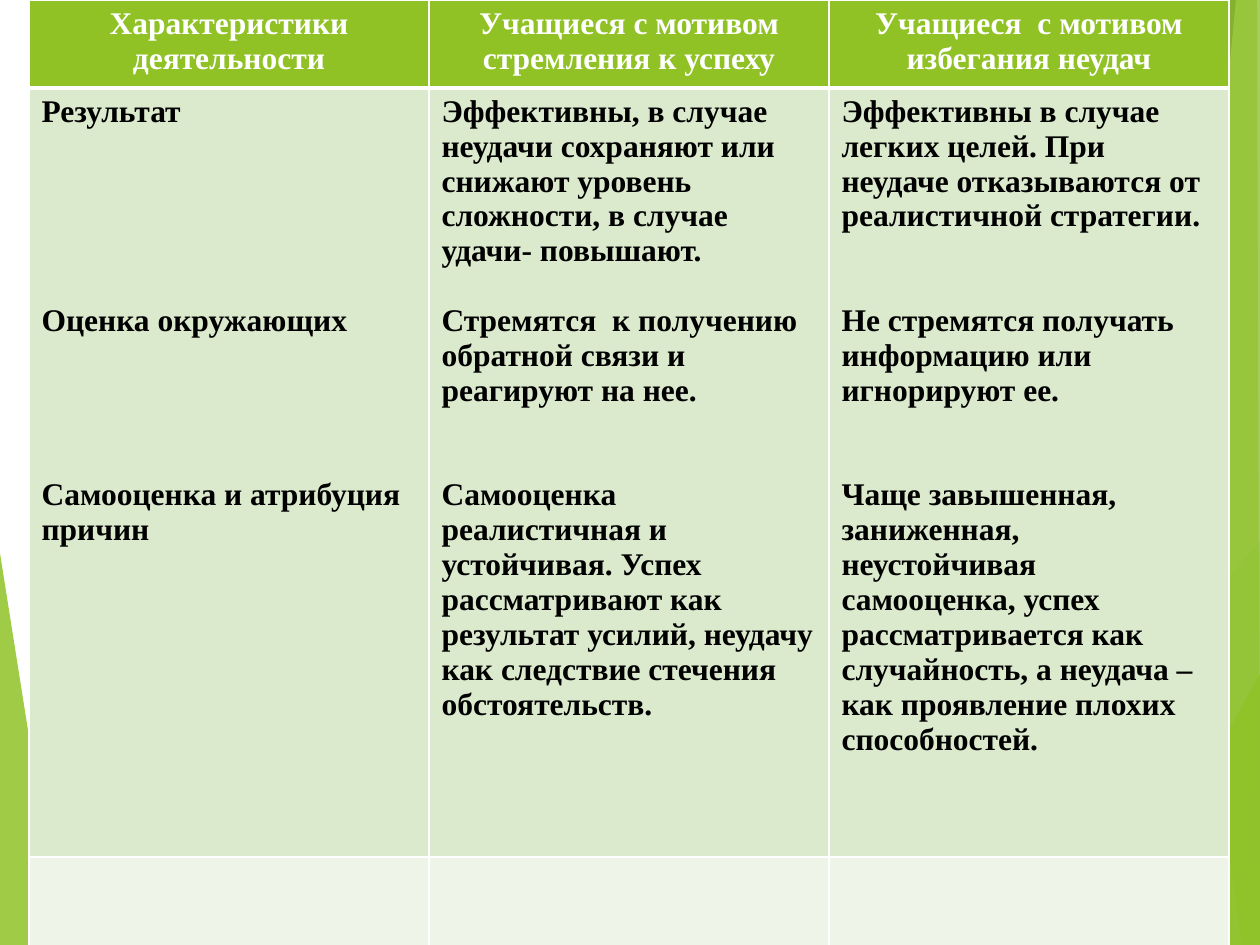
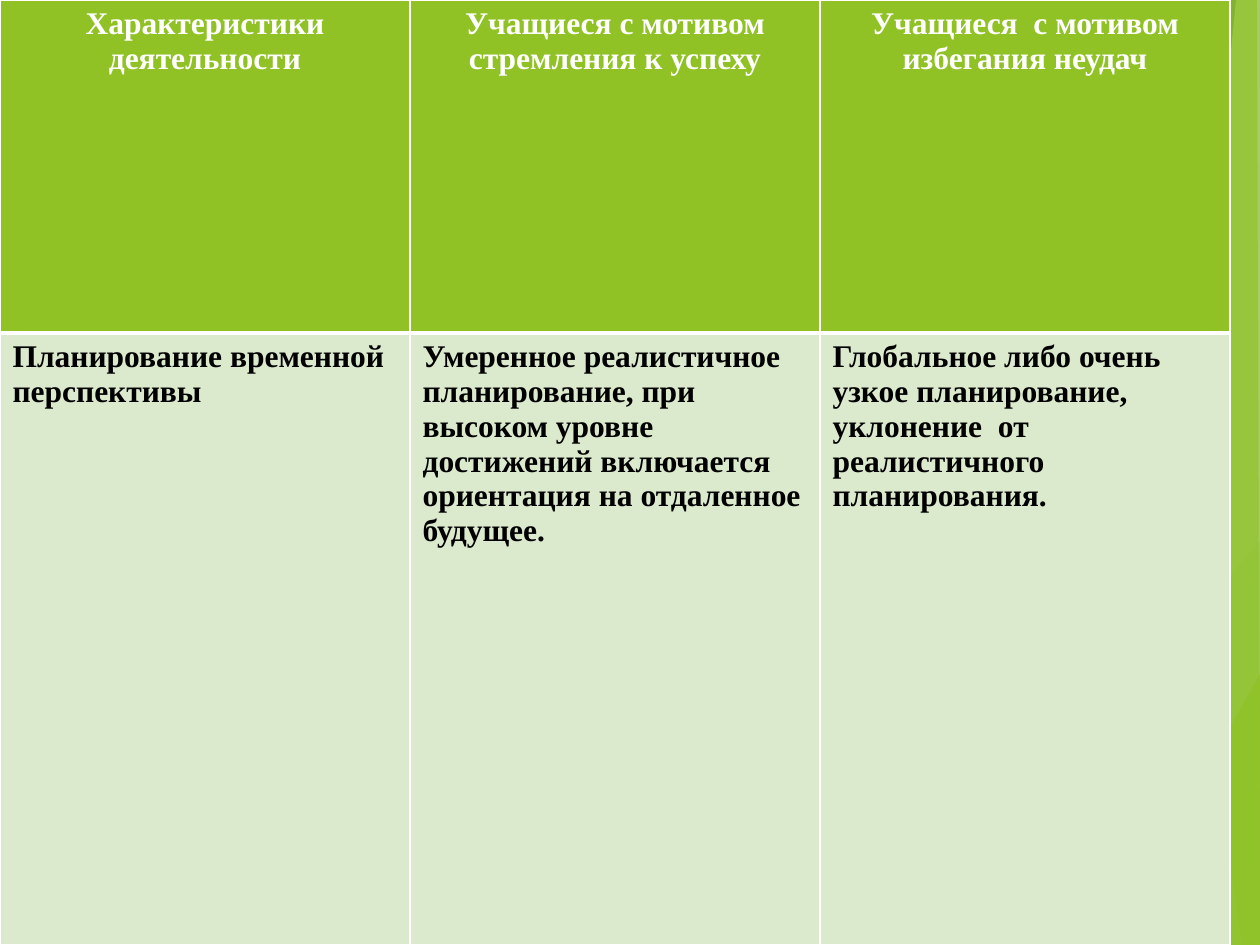
from lxml import etree
from pptx import Presentation
from pptx.dml.color import RGBColor
from pptx.enum.shapes import MSO_CONNECTOR
from pptx.enum.text import PP_ALIGN
from pptx.oxml.ns import qn
from pptx.util import Pt

STRAIGHT = MSO_CONNECTOR.STRAIGHT
LEFT, CENTER = PP_ALIGN.LEFT, PP_ALIGN.CENTER
PX = 914400 / 126
WIDE, HIGH = 1260, 945
FONT = "Times New Roman"
LINE = 19.93  # height of one text line, points

HUES = {
    "green": "90C226", "leaf": "54A021", "dark": "3F7819", "lime": "C0E474",
    "pale": "DBE9CD", "faint": "EEF4E8", "white": "FFFFFF", "black": "000000",
    "gray": "BFBFBF", "light": "D9D9D9",
}

# Table content: a cell is a list of (text, blank lines above)
HEAD = [
    [("Характеристики деятельности", 0)],
    [("Учащиеся с мотивом стремления к успеху", 0)],
    [("Учащиеся  с мотивом избегания неудач", 0)],
]
RESULT = [
    [("Результат", 0),
     ("Оценка окружающих", 5),
     ("Самооценка и атрибуция причин", 4)],
    [("Эффективны, в случае неудачи сохраняют или снижают уровень "
      "сложности, в случае удачи- повышают.", 0),
     ("Стремятся  к получению обратной связи и реагируют на нее.", 1),
     ("Самооценка реалистичная и устойчивая. Успех рассматривают как "
      "результат усилий, неудачу как следствие стечения обстоятельств.", 2)],
    [("Эффективны в случае легких целей. При неудаче отказываются от "
      "реалистичной стратегии.", 0),
     ("Не стремятся получать информацию или игнорируют ее.", 2),
     ("Чаще завышенная, заниженная, неустойчивая самооценка, успех "
      "рассматривается как случайность, а неудача – как проявление "
      "плохих способностей.", 2)],
]
PLAN = [
    [("Планирование временной перспективы", 0)],
    [("Умеренное реалистичное планирование, при высоком уровне достижений "
      "включается ориентация на отдаленное будущее.", 0)],
    [("Глобальное либо очень узкое планирование, уклонение  от "
      "реалистичного планирования.", 0)],
]
SLIDES = [
    {"left": 29, "col": 400, "tall": [88, 769, 98],
     "rows": [HEAD, RESULT, [[], [], []]]},
    {"left": 0, "col": 410, "tall": [333, 612], "rows": [HEAD, PLAN]},
]
FILLS = ["green", "pale", "faint"]

# Backdrop: (colour, opacity in percent, corners) and (colour, from, to)
WEDGE = ("green", 85, [(0, 553), (62, HIGH), (0, HIGH)])
RAYS = [("light", (707, HIGH), (WIDE, 576)), ("gray", (970, 0), (1139, HIGH))]
FACETS = [
    ("green", 30, [(1228, 0), (950, HIGH), (WIDE, HIGH), (WIDE, 0)]),
    ("green", 20, [(993, 0), (1158, HIGH), (WIDE, HIGH), (WIDE, 0)]),
    ("leaf", 72, [(915, HIGH), (WIDE, 541), (WIDE, HIGH)]),
    ("dark", 70, [(966, 0), (1222, HIGH), (WIDE, HIGH), (WIDE, 0)]),
    ("lime", 70, [(1236, 0), (1143, HIGH), (WIDE, HIGH), (WIDE, 0)]),
    ("green", 65, [(1113, 0), (1242, HIGH), (WIDE, HIGH), (1257, 0)]),
    ("green", 80, [(1110, HIGH), (WIDE, 674), (WIDE, HIGH)]),
]


def emu(*nums):
    return [round(n * PX) for n in nums]


def rgb(hue):
    return RGBColor.from_string(HUES[hue])


def facet(slide, hue, alpha, dots):
    pen = slide.shapes.build_freeform(*emu(*dots[0]), scale=1.0)
    pen.add_line_segments([emu(*dot) for dot in dots[1:]], close=True)
    shape = pen.convert_to_shape()
    shape.shadow.inherit = False
    shape.line.fill.background()
    shape.fill.solid()
    shape.fill.fore_color.rgb = rgb(hue)
    tint = shape._element.spPr.find(".//" + qn("a:srgbClr"))
    etree.SubElement(tint, qn("a:alpha"), val=str(alpha * 1000))


def ray(slide, hue, start, end):
    line = slide.shapes.add_connector(STRAIGHT, *emu(*start, *end))
    line.line.color.rgb = rgb(hue)
    line.line.width = Pt(0.75)
    etree.SubElement(line._element.spPr, qn("a:effectLst"))


def backdrop(slide):
    facet(slide, *WEDGE)
    for item in RAYS:
        ray(slide, *item)
    for item in FACETS:
        facet(slide, *item)


def write(para, text, hue="black", size=18, bold=True, align=LEFT, gap=0):
    para.alignment = align
    para.space_before = Pt(gap * LINE)
    run = para.add_run()
    run.text = text
    run.font.name = FONT
    run.font.size = Pt(size)
    run.font.bold = bold
    run.font.color.rgb = rgb(hue)


def border(cell, top, base):
    props = cell._tc.get_or_add_tcPr()
    for side, width in zip("LRTB", (1, 1, top, base)):
        edge = etree.SubElement(props, qn("a:ln" + side), w=str(Pt(width)))
        fill = etree.SubElement(edge, qn("a:solidFill"))
        etree.SubElement(fill, qn("a:srgbClr"), val=HUES["white"])


def grid(slide, left, col, tall, rows):
    count = len(HEAD)
    box = emu(left, 0, col * count, sum(tall))
    table = slide.shapes.add_table(len(rows), count, *box).table
    for item in table.columns:
        item.width = emu(col)[0]
    for r, row in enumerate(rows):
        table.rows[r].height = emu(tall[r])[0]
        hue, align = ("white", CENTER) if r == 0 else ("black", LEFT)
        for c, paras in enumerate(row):
            cell = table.cell(r, c)
            # The thick rule lies between the head and the first body row
            border(cell, top=3 if r == 1 else 1, base=3 if r == 0 else 1)
            cell.fill.solid()
            cell.fill.fore_color.rgb = rgb(FILLS[r])
            frame = cell.text_frame
            for n, (text, gap) in enumerate(paras):
                para = frame.add_paragraph() if n else frame.paragraphs[0]
                write(para, text, hue=hue, align=align, gap=gap)


def main():
    deck = Presentation()
    deck.slide_width, deck.slide_height = emu(WIDE, HIGH)
    for data in SLIDES:
        slide = deck.slides.add_slide(deck.slide_layouts[6])
        backdrop(slide)
        grid(slide, **data)
    deck.save("out.pptx")


if __name__ == "__main__":
    main()
